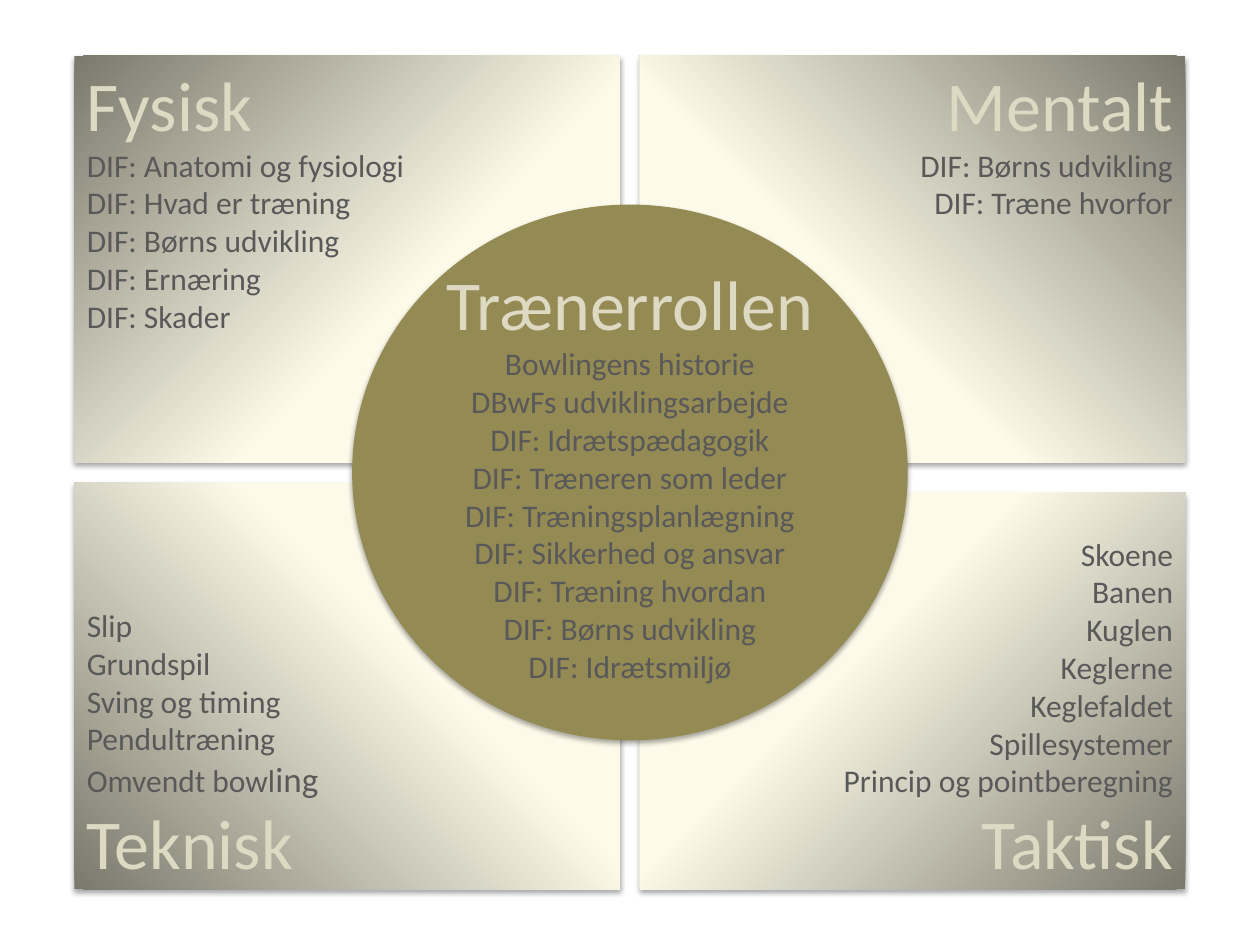
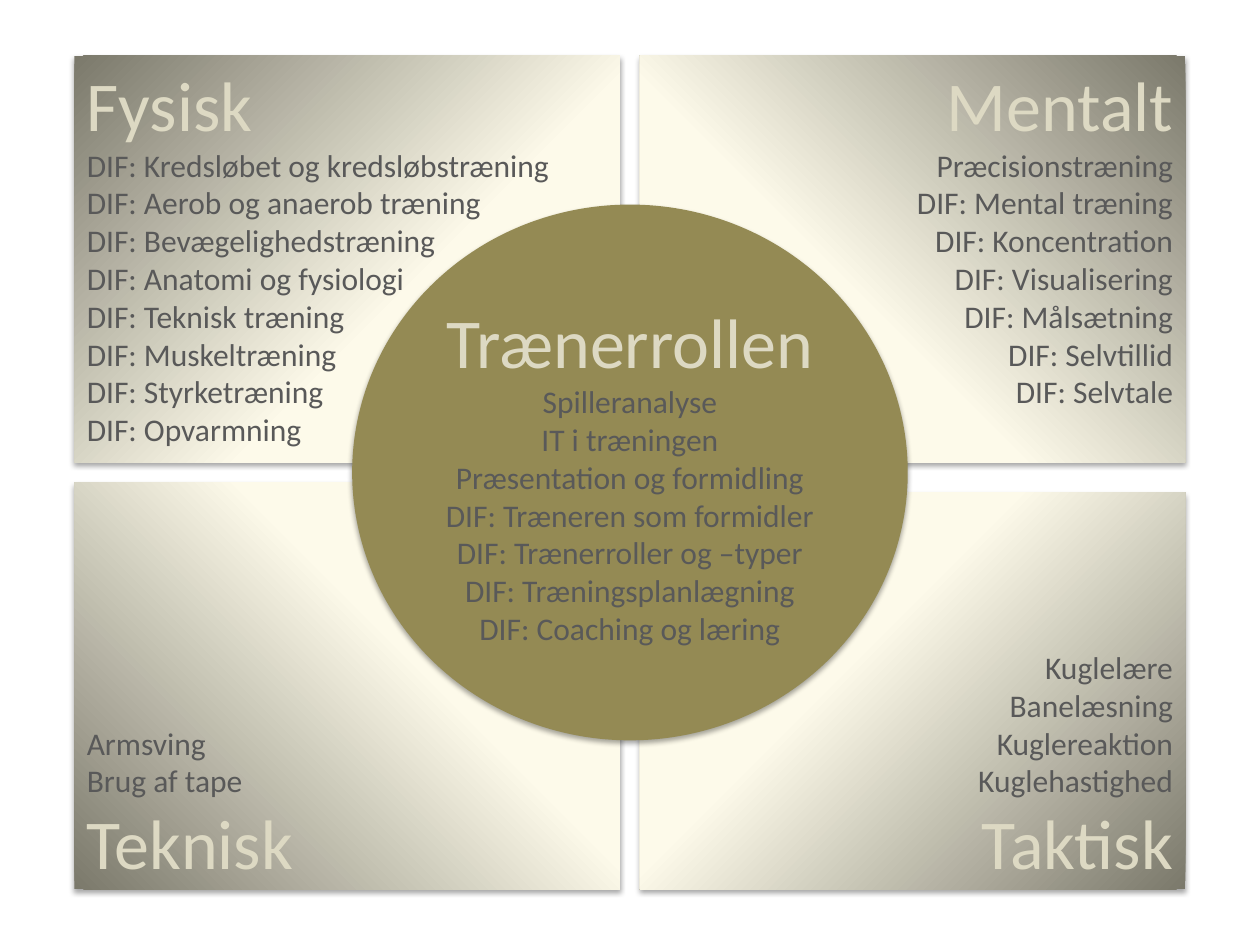
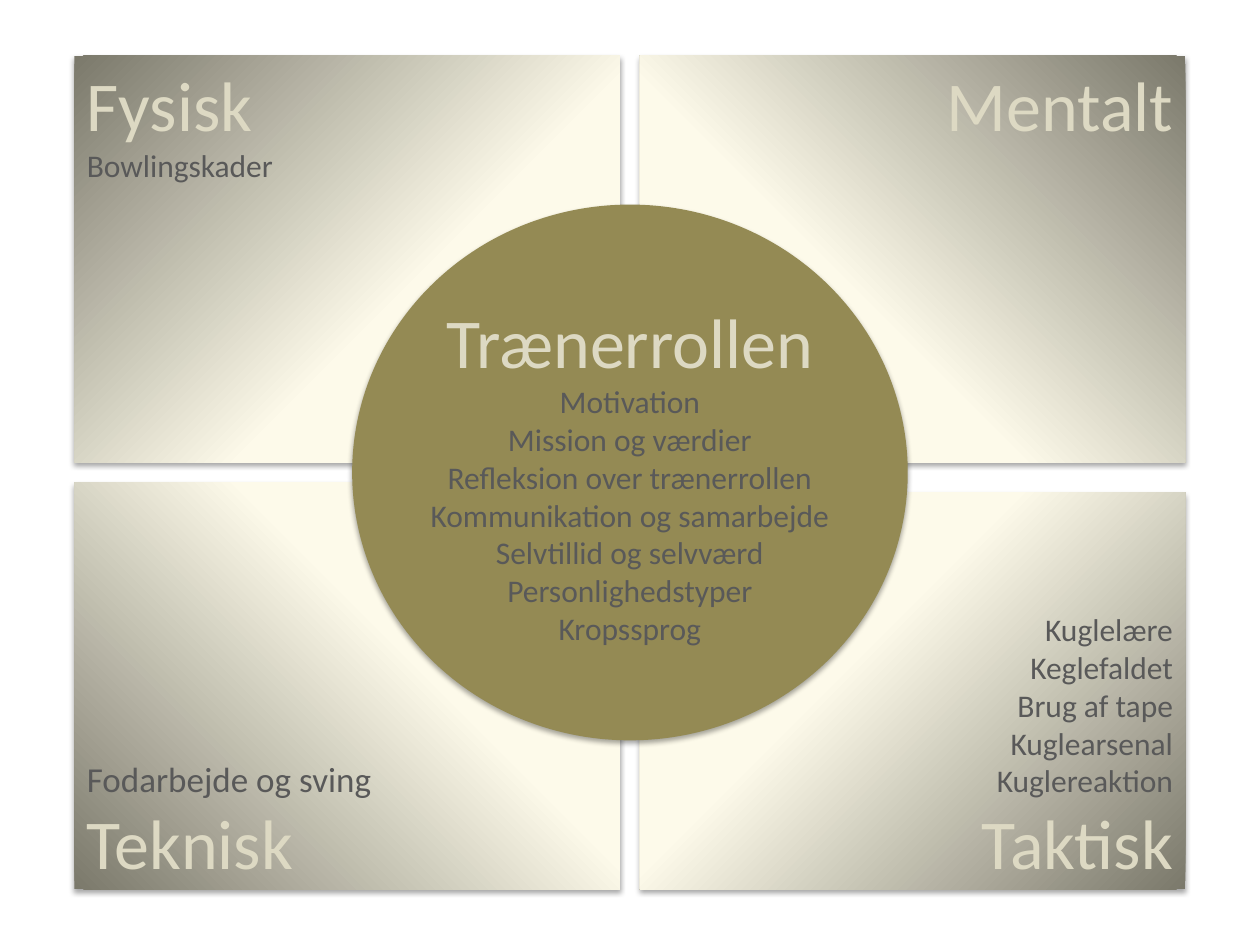
from dataclasses import dataclass

from lxml import etree
from pptx import Presentation
from pptx.dml.color import RGBColor
from pptx.enum.shapes import MSO_SHAPE
from pptx.enum.text import MSO_ANCHOR, PP_ALIGN
from pptx.oxml.ns import qn
from pptx.util import Cm, Pt

RECT, OVAL = MSO_SHAPE.RECTANGLE, MSO_SHAPE.OVAL
TOP, MIDDLE, BOTTOM = MSO_ANCHOR.TOP, MSO_ANCHOR.MIDDLE, MSO_ANCHOR.BOTTOM
LEFT, CENTER, RIGHT = PP_ALIGN.LEFT, PP_ALIGN.CENTER, PP_ALIGN.RIGHT


@dataclass(frozen=True)
class Theme:
    font: str = "Calibri"
    head: str = "DDD9C3"
    body: str = "595959"
    disc: str = "948A54"
    glow: tuple = ((0, "FEFCEE"), (40, "FDFAEA"), (100, "7B796B"))
    shade: str = "000000"
    head_size: int = 40
    body_size: int = 18
    big_size: int = 20


THEME = Theme()

# Lengths in centimetres
WIDE, HIGH = 25.4, 19.05
EDGE_X, EDGE_Y = 1.5, 1.12
CARD_W, CARD_H, LOW_H = 11, 8.2, 8
DISC_W, DISC_H = 11.2, 10.8

# Heading, column, row and height of each card
CARDS = (
    ("Fysisk", 0, 0, CARD_H),
    ("Mentalt", 1, 0, CARD_H),
    ("Teknisk", 0, 1, CARD_H),
    ("Taktisk", 1, 1, LOW_H),
)

# A line is a text, or a tuple of (text, size) runs
LEVELS = (
    {
        "Fysisk": ("DIF: Anatomi og fysiologi", "DIF: Hvad er træning",
                   "DIF: Børns udvikling", "DIF: Ernæring", "DIF: Skader"),
        "Mentalt": ("DIF: Børns udvikling", "DIF: Træne hvorfor"),
        "Teknisk": ("Slip", "Grundspil", "Sving og timing", "Pendultræning",
                    (("Omvendt bowl", THEME.body_size),
                     ("ing", THEME.big_size))),
        "Taktisk": ("Skoene", "Banen", "Kuglen", "Keglerne", "Keglefaldet",
                    "Spillesystemer", "Princip og pointberegning"),
        "Trænerrollen": ("Bowlingens historie", "DBwFs udviklingsarbejde",
                         "DIF: Idrætspædagogik", "DIF: Træneren som leder",
                         "DIF: Træningsplanlægning",
                         "DIF: Sikkerhed og ansvar", "DIF: Træning hvordan",
                         "DIF: Børns udvikling", "DIF: Idrætsmiljø"),
    },
    {
        "Fysisk": ("DIF: Kredsløbet og kredsløbstræning",
                   "DIF: Aerob og anaerob træning",
                   "DIF: Bevægelighedstræning", "DIF: Anatomi og fysiologi",
                   "DIF: Teknisk træning", "DIF: Muskeltræning",
                   "DIF: Styrketræning", "DIF: Opvarmning"),
        "Mentalt": ("Præcisionstræning", "DIF: Mental træning",
                    "DIF: Koncentration", "DIF: Visualisering",
                    "DIF: Målsætning", "DIF: Selvtillid", "DIF: Selvtale"),
        "Teknisk": ("Armsving", "Brug af tape"),
        "Taktisk": ("Kuglelære", "Banelæsning", "Kuglereaktion",
                    "Kuglehastighed"),
        "Trænerrollen": ("Spilleranalyse", "IT i træningen",
                         "Præsentation og formidling",
                         "DIF: Træneren som formidler",
                         "DIF: Trænerroller og –typer",
                         "DIF: Træningsplanlægning",
                         "DIF: Coaching og læring"),
    },
    {
        "Fysisk": ("Bowlingskader",),
        "Mentalt": (),
        "Teknisk": ((("Fodarbejde og sving", THEME.big_size),),),
        "Taktisk": ("Kuglelære", "Keglefaldet", "Brug af tape",
                    "Kuglearsenal", "Kuglereaktion"),
        "Trænerrollen": ("Motivation", "Mission og værdier",
                         "Refleksion over trænerrollen",
                         "Kommunikation og samarbejde",
                         "Selvtillid og selvværd", "Personlighedstyper",
                         "Kropssprog"),
    },
)


def node(parent, tag, **attrs):
    return etree.SubElement(parent, qn(tag),
                            {key: str(val) for key, val in attrs.items()})


def add_shade(shape):
    """Give the shape a soft shadow straight below it."""
    shape.shadow.inherit = False
    effects = shape._element.spPr.find(qn("a:effectLst"))
    outer = node(effects, "a:outerShdw", blurRad=Pt(3.1), dist=Pt(1.8),
                 dir=5400000, rotWithShape=0)
    color = node(outer, "a:srgbClr", val=THEME.shade)
    node(color, "a:alpha", val=35000)


def add_glow(shape, col, row):
    """Fill the card with light that spreads from its inner corner."""
    shape.fill.gradient()
    grad = shape._element.spPr.find(qn("a:gradFill"))
    for child in list(grad):
        grad.remove(child)
    stops = node(grad, "a:gsLst")
    for pos, color in THEME.glow:
        stop = node(stops, "a:gs", pos=pos * 1000)
        node(stop, "a:srgbClr", val=color)
    focus = node(grad, "a:path", path="circle")
    node(focus, "a:fillToRect", l=100000 * (1 - col), t=100000 * (1 - row),
         r=100000 * col, b=100000 * row)


def add_shape(slide, kind, box):
    shape = slide.shapes.add_shape(kind, *map(Cm, box))
    shape.line.fill.background()
    add_shade(shape)
    return shape


def add_text(para, text, size=THEME.body_size, color=THEME.body, align=LEFT):
    para.alignment = align
    run = para.add_run()
    run.text = text
    run.font.name = THEME.font
    run.font.size = Pt(size)
    run.font.color.rgb = RGBColor.from_string(color)


def fill_text(shape, head, lines, align, anchor, wrap=True):
    """Write the lines below the heading, or above it at the bottom."""
    frame = shape.text_frame
    frame.word_wrap = wrap
    frame.vertical_anchor = anchor
    title = ((head, THEME.head_size, THEME.head),)
    rows = (*lines, title) if anchor == BOTTOM else (title, *lines)
    for i, row in enumerate(rows):
        para = frame.add_paragraph() if i else frame.paragraphs[0]
        runs = ((row,),) if isinstance(row, str) else row
        for run in runs:
            add_text(para, *run, align=align)


def add_card(slide, box, head, lines, col, row):
    card = add_shape(slide, RECT, box)
    add_glow(card, col, row)
    fill_text(card, head, lines, RIGHT if col else LEFT,
              BOTTOM if row else TOP)


def add_disc(slide, box, head, lines):
    disc = add_shape(slide, OVAL, box)
    disc.fill.solid()
    disc.fill.fore_color.rgb = RGBColor.from_string(THEME.disc)
    disc.text_frame.margin_left = disc.text_frame.margin_right = 0
    fill_text(disc, head, lines, CENTER, MIDDLE, wrap=False)


def add_level(deck, topics):
    """Add a slide with four cards around the coach's role."""
    slide = deck.slides.add_slide(deck.slide_layouts.get_by_name("Blank"))
    for head, col, row, high in CARDS:
        left = WIDE - EDGE_X - CARD_W if col else EDGE_X
        top = HIGH - EDGE_Y - high if row else EDGE_Y
        add_card(slide, (left, top, CARD_W, high), head, topics[head],
                 col, row)
    role = "Trænerrollen"
    box = ((WIDE - DISC_W) / 2, (HIGH - DISC_H) / 2, DISC_W, DISC_H)
    add_disc(slide, box, role, topics[role])


def main():
    deck = Presentation()
    deck.slide_width, deck.slide_height = Cm(WIDE), Cm(HIGH)
    for topics in LEVELS:
        add_level(deck, topics)
    deck.save("out.pptx")


if __name__ == "__main__":
    main()
